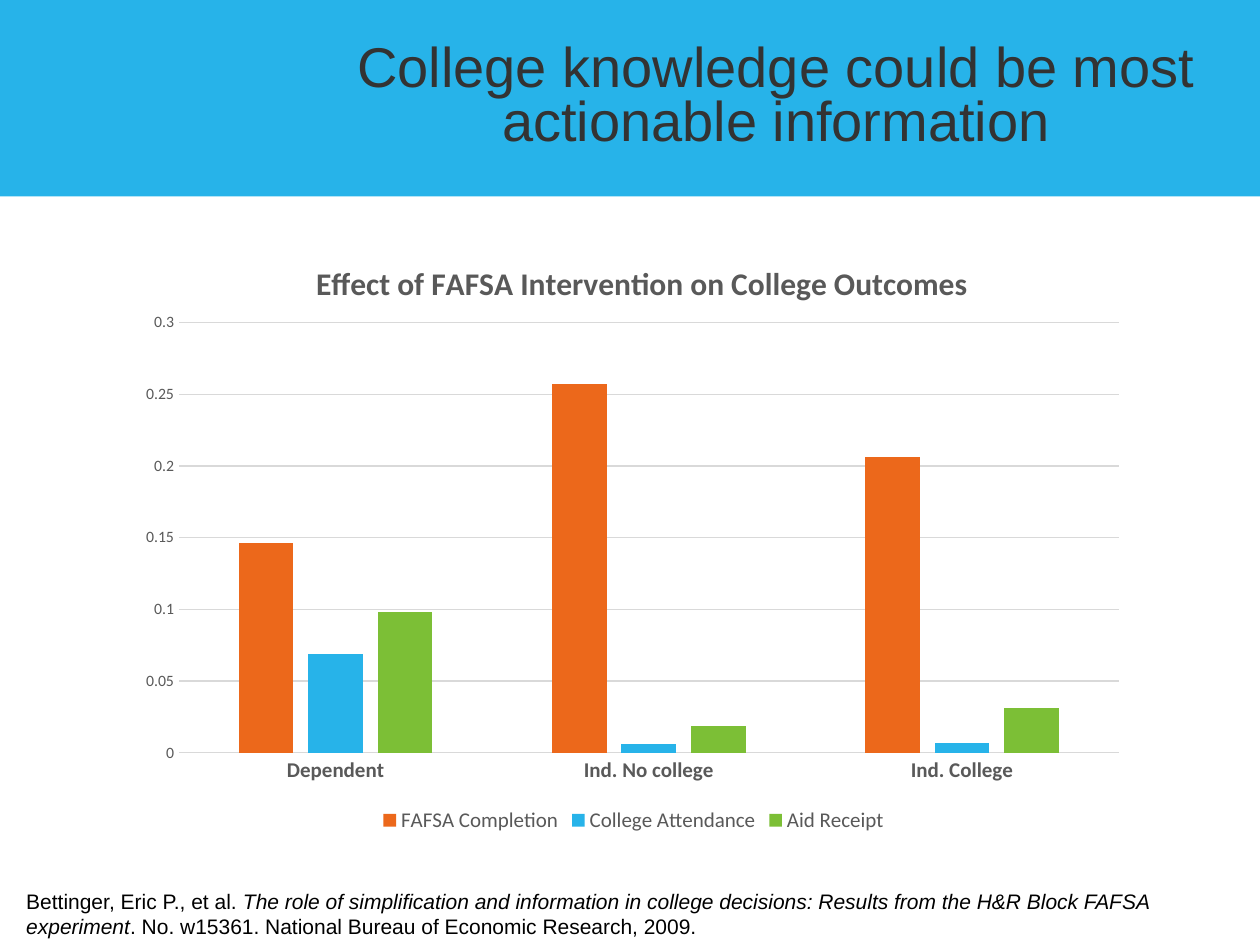
from lxml import etree
from pptx import Presentation
from pptx.chart.data import CategoryChartData
from pptx.dml.color import RGBColor
from pptx.enum.chart import XL_CHART_TYPE as ChartType, XL_LEGEND_POSITION as LegendPosition
from pptx.enum.chart import XL_TICK_MARK as TickMark
from pptx.enum.shapes import MSO_SHAPE as Shape
from pptx.enum.text import MSO_ANCHOR as Anchor, MSO_AUTO_SIZE as AutoSize, PP_ALIGN as Align
from pptx.oxml import parse_xml
from pptx.oxml.ns import nsdecls, qn
from pptx.util import Cm, Pt

SKY = RGBColor(0x27, 0xB3, 0xE9)
ORANGE = RGBColor(0xEC, 0x68, 0x1B)
GREEN = RGBColor(0x7C, 0xBF, 0x36)
CHARCOAL = RGBColor(0x33, 0x33, 0x33)
GREY = RGBColor(0x59, 0x59, 0x59)
RULE = RGBColor(0xD9, 0xD9, 0xD9)
BLACK = RGBColor(0, 0, 0)

OUTCOMES = ["Dependent", "Ind. No college", "Ind. College"]
EFFECTS = [
    ("FAFSA Completion", (0.146, 0.257, 0.206), ORANGE),
    ("College Attendance", (0.069, 0.006, 0.007), SKY),
    ("Aid Receipt", (0.098, 0.019, 0.031), GREEN),
]
CITATION = [
    ("Bettinger, Eric P., et al. ", False),
    ("The role of simplification and information in college decisions: "
     "Results from the H&R Block FAFSA experiment", True),
    (". No. w15361. National Bureau of Economic Research, 2009.", False),
]


def style_font(font, name, size, color, bold=False, italic=False):
    font.name, font.size = name, Pt(size)
    font.bold, font.italic = bold, italic
    font.color.rgb = color


def place(parent, **fractions):
    """Fix a chart part's layout, in fractions of the chart area."""
    layout = parent.find(qn("c:layout"))
    if layout is None:
        layout = parse_xml(f"<c:layout {nsdecls('c')}/>")
        text = parent.find(qn("c:tx"))
        parent.insert(0 if text is None else 1, layout)
    for child in list(layout):
        layout.remove(child)
    manual = etree.SubElement(layout, qn("c:manualLayout"))
    if "w" in fractions:
        etree.SubElement(manual, qn("c:layoutTarget"), val="inner")
    for side in ("x", "y"):
        etree.SubElement(manual, qn(f"c:{side}Mode"), val="edge")
    for key, value in fractions.items():
        etree.SubElement(manual, qn(f"c:{key}"), val=str(value))


class SlideBuilder:
    text_font = "Arial"
    chart_font = "Calibri"

    def __init__(self, deck):
        self.slide = deck.slides.add_slide(deck.slide_layouts[5])

    def band(self, width, height):
        """Add the header band behind everything else."""
        band = self.slide.shapes.add_shape(Shape.RECTANGLE, 0, 0, width, height)
        band.shadow.inherit = False
        band.fill.solid()
        band.fill.fore_color.rgb = SKY
        band.line.fill.background()
        self.slide.shapes._spTree.insert(2, band._element)

    def title(self, words, left, top, width, height):
        title = self.slide.shapes.title
        title.left, title.top, title.width, title.height = left, top, width, height
        frame = title.text_frame
        frame.auto_size = AutoSize.NONE
        frame.vertical_anchor = Anchor.BOTTOM
        line = frame.paragraphs[0]
        line.alignment, line.line_spacing = Align.CENTER, 0.8
        run = line.add_run()
        run.text = words
        style_font(run.font, self.text_font, 32, CHARCOAL)

    def citation(self, parts, left, top, width, height):
        frame = self.slide.shapes.add_textbox(left, top, width, height).text_frame
        frame.word_wrap = True
        for words, italic in parts:
            run = frame.paragraphs[0].add_run()
            run.text = words
            style_font(run.font, self.text_font, 12, BLACK, italic=italic)

    def column_chart(self, heading, categories, series, left, top, width, height):
        data = CategoryChartData()
        data.categories = categories
        for name, values, _ in series:
            data.add_series(name, values)
        chart = self.slide.shapes.add_chart(
            ChartType.COLUMN_CLUSTERED, left, top, width, height, data).chart
        style_font(chart.font, self.chart_font, 10, BLACK)

        run = chart.chart_title.text_frame.paragraphs[0].add_run()
        run.text = heading
        style_font(run.font, self.chart_font, 18, GREY, bold=True)
        chart.chart_title.include_in_layout = False
        place(chart.chart_title._element, x=0.18, y=0.04)

        plot = chart.plots[0]
        plot.gap_width, plot.overlap, plot.vary_by_categories = 219, -27, False
        for bars, (_, _, color) in zip(plot.series, series):
            bars.format.fill.solid()
            bars.format.fill.fore_color.rgb = color
        place(chart._chartSpace.chart.plotArea, x=0.05, y=0.15, w=0.93, h=0.71)

        for axis, size, bold in ((chart.category_axis, 12, True), (chart.value_axis, 9, False)):
            axis.major_tick_mark = axis.minor_tick_mark = TickMark.NONE
            style_font(axis.tick_labels.font, self.chart_font, size, GREY, bold=bold)
        values = chart.value_axis
        values.minimum_scale, values.maximum_scale, values.major_unit = 0, 0.3, 0.05
        values.format.line.fill.background()
        for rule in (chart.category_axis.format.line, values.major_gridlines.format.line):
            rule.color.rgb, rule.width = RULE, Pt(0.75)

        chart.has_legend = True
        chart.legend.position = LegendPosition.BOTTOM
        chart.legend.include_in_layout = False
        style_font(chart.legend.font, self.chart_font, 12, GREY)


def main():
    deck = Presentation()
    deck.slide_width, deck.slide_height = Cm(25.4), Cm(19.05)
    builder = SlideBuilder(deck)
    builder.band(deck.slide_width, Cm(3.96))
    builder.title("College knowledge could be most actionable information",
                  Cm(6.76), Cm(0.23), Cm(17.78), Cm(2.97))
    builder.column_chart("Effect of FAFSA Intervention on College Outcomes", OUTCOMES, EFFECTS,
                         Cm(2.59), Cm(4.67), Cm(20.37), Cm(12.22))
    builder.citation(CITATION, Cm(0.28), Cm(17.78), Cm(24.84), Cm(1.27))
    deck.save("out.pptx")


if __name__ == "__main__":
    main()
